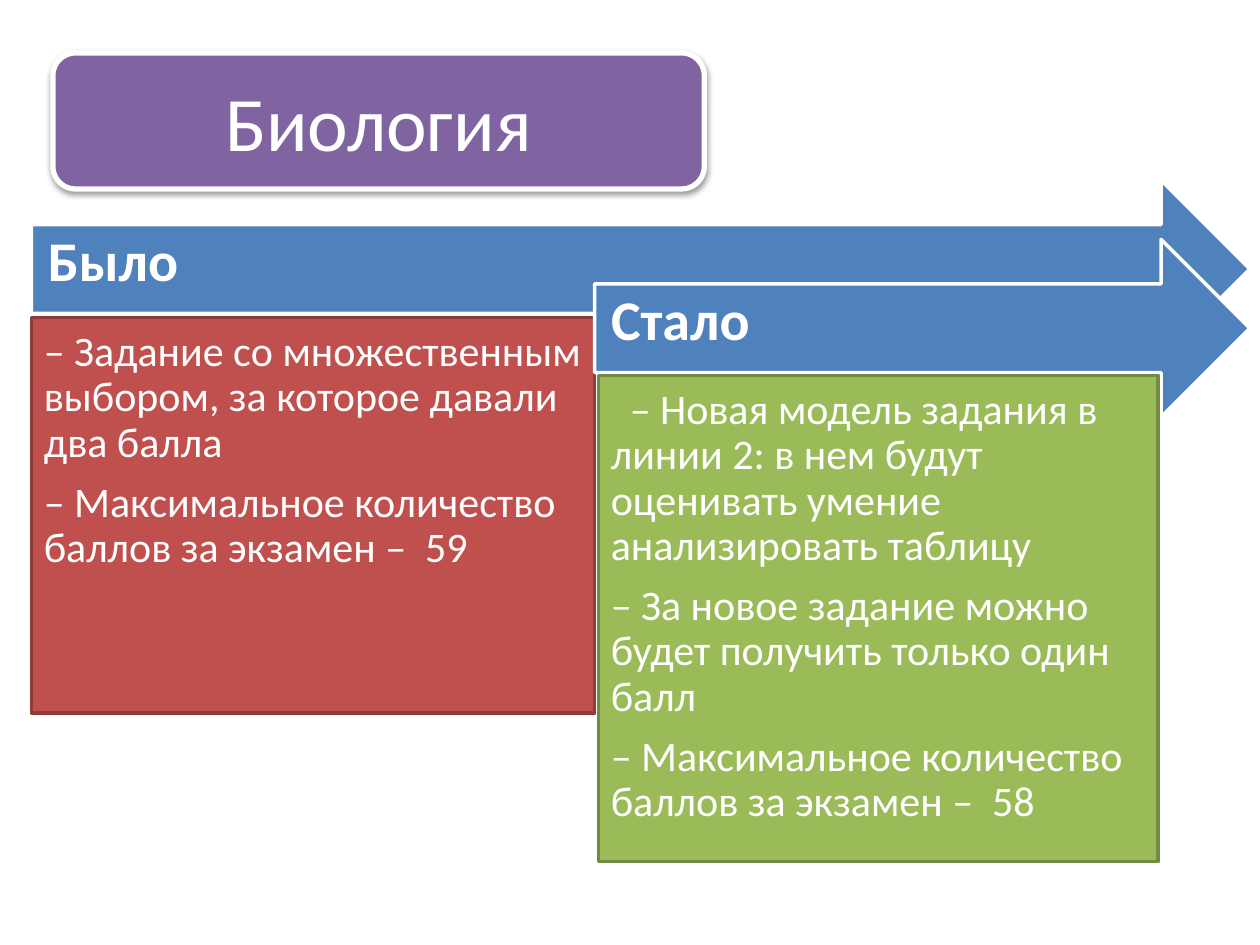
from lxml import etree
from pptx import Presentation
from pptx.dml.color import RGBColor
from pptx.enum.shapes import MSO_SHAPE as SHAPE
from pptx.enum.text import MSO_ANCHOR as ANCHOR, PP_ALIGN as ALIGN
from pptx.oxml.ns import qn
from pptx.util import Inches, Pt

COLORS = {
    "white": "FFFFFF", "blue": "4F81BD", "purple": "8064A2",
    "red": "C0504D", "dark_red": "8E3B39",
    "green": "9BBB59", "dark_green": "738A42", "shadow": "000000",
}
BEFORE = [
    "– Задание со множественным выбором, за которое давали два балла",
    "– Максимальное количество баллов за экзамен –  59",
]
AFTER = [
    "– Новая модель задания в линии 2: в нем будут оценивать умение анализировать таблицу",
    "– За новое задание можно будет получить только один балл",
    "– Максимальное количество баллов за экзамен –  58",
]


def add_box(slide, kind, box, fill, line, width=2):
    sp = slide.shapes.add_shape(kind, *map(Inches, box))
    sp.shadow.inherit = False
    sp.fill.solid()
    sp.fill.fore_color.rgb = RGBColor.from_string(COLORS[fill])
    sp.line.color.rgb = RGBColor.from_string(COLORS[line])
    sp.line.width = Pt(width)
    return sp


def add_text(sp, *texts, size=24, bold=False, align=ALIGN.LEFT, anchor=ANCHOR.TOP,
             insets=(0.1, 0.1, 0.1, 0.1), spacing=0.9, after=0, first_indent=0):
    tf = sp.text_frame
    tf.word_wrap = True
    tf.vertical_anchor = anchor
    tf.margin_left, tf.margin_top, tf.margin_right, tf.margin_bottom = map(Inches, insets)
    for i, text in enumerate(texts):
        p = tf.paragraphs[0] if i == 0 else tf.add_paragraph()
        p.alignment = align
        p.line_spacing = spacing
        p.space_after = Pt(after)
        if i == 0 and first_indent:
            p._p.get_or_add_pPr().set("indent", str(Inches(first_indent)))
        r = p.add_run()
        r.text = text
        r.font.name = "Calibri"
        r.font.size = Pt(size)
        r.font.bold = bold
        r.font.color.rgb = RGBColor.from_string(COLORS["white"])


def add_shadow(sp, blur, distance, alpha):
    effects = sp._element.spPr.find(qn("a:effectLst"))
    shadow = etree.SubElement(effects, qn("a:outerShdw"), blurRad=str(Pt(blur)),
                              dist=str(Pt(distance)), dir="5400000", rotWithShape="0")
    color = etree.SubElement(shadow, qn("a:srgbClr"), val=COLORS["shadow"])
    etree.SubElement(color, qn("a:alpha"), val=str(alpha * 1000))


def add_title(slide, box, text):
    sp = add_box(slide, SHAPE.ROUNDED_RECTANGLE, box, "purple", "white", 3)
    add_shadow(sp, 3.1, 1.6, 38)
    add_text(sp, text, size=44, align=ALIGN.CENTER, anchor=ANCHOR.MIDDLE, spacing=1)


def add_stage(slide, arrow_box, body_box, heading, points, fill, line, first_indent=0):
    arrow = add_box(slide, SHAPE.RIGHT_ARROW, arrow_box, "blue", "white")
    add_text(arrow, heading, size=32, bold=True, anchor=ANCHOR.MIDDLE,
             insets=(0.13, 0, 0.28, 0.09))
    body = add_box(slide, SHAPE.RECTANGLE, body_box, fill, line)
    add_text(body, *points, after=8.4, first_indent=first_indent)


def main():
    prs = Presentation()
    prs.slide_width, prs.slide_height = Inches(10), Inches(7.5)
    s = prs.slides.add_slide(prs.slide_layouts[6])
    add_stage(s, (0.25, 1.43, 9.67, 1.41), (0.25, 2.52, 4.47, 3.14),
              "Было", BEFORE, "red", "dark_red")
    add_stage(s, (4.72, 1.9, 5.2, 1.41), (4.75, 2.98, 4.44, 3.86),
              "Стало", AFTER, "green", "dark_green", first_indent=0.15)
    add_title(s, (0.42, 0.42, 5.17, 1.08), "Биология")
    prs.save("out.pptx")


if __name__ == "__main__":
    main()
